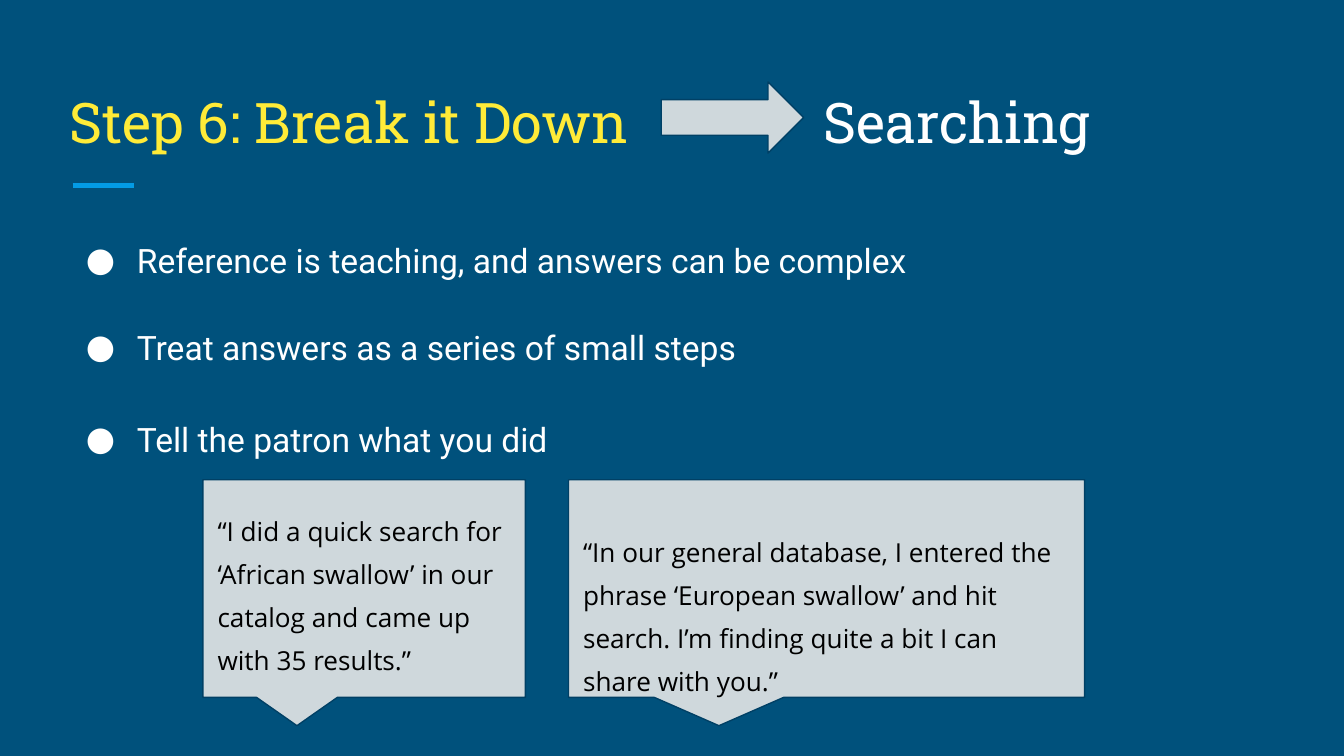
from dataclasses import dataclass

from lxml import etree
from pptx import Presentation
from pptx.dml.color import RGBColor
from pptx.enum.shapes import MSO_CONNECTOR, MSO_SHAPE
from pptx.enum.text import MSO_ANCHOR
from pptx.oxml.ns import qn
from pptx.util import Inches, Pt

STRAIGHT = MSO_CONNECTOR.STRAIGHT
RIGHT_ARROW = MSO_SHAPE.RIGHT_ARROW
TOP, MIDDLE, BOTTOM = MSO_ANCHOR.TOP, MSO_ANCHOR.MIDDLE, MSO_ANCHOR.BOTTOM


@dataclass(frozen=True)
class Theme:
    background: str = "00517C"
    accent: str = "039BE5"
    highlight: str = "FFEB38"
    light: str = "FFFFFF"
    dark: str = "000000"
    panel: str = "CFD8DC"
    outline: str = "004065"
    title_font: str = "Roboto Slab"
    body_font: str = "Roboto"
    quote_font: str = "Open Sans"
    title_size: int = 30
    body_size: int = 18
    quote_size: int = 14


THEME = Theme()

# Text and the space before it in points
POINTS = [
    ("Reference is teaching, and answers can be complex", 0),
    ("Treat answers as a series of small steps", 22),
    ("Tell the patron what you did", 24.5),
]

# Left edge, width, top of the text, text
QUOTES = [
    (1.51, 2.4, 3.68,
     "“I did a quick search for ‘African swallow’ in our catalog "
     "and came up with 35 results.”"),
    (4.23, 3.84, 3.84,
     "“In our general database, I entered the phrase ‘European swallow’ "
     "and hit search. I’m finding quite a bit I can share with you.”"),
]
CALLOUT_TOP, CALLOUT_BOTTOM, CALLOUT_TIP = 3.57, 5.19, 5.4


def rgb(value):
    return RGBColor.from_string(value)


def add_bullet(paragraph, font, color):
    properties = paragraph._p.get_or_add_pPr()
    properties.set("marL", str(Inches(0.5)))
    properties.set("indent", str(Inches(-0.38)))
    bullet_color = etree.SubElement(properties, qn("a:buClr"))
    etree.SubElement(bullet_color, qn("a:srgbClr"), val=color)
    etree.SubElement(properties, qn("a:buFont"), typeface=font)
    etree.SubElement(properties, qn("a:buChar"), char="●")


def add_tab_stop(paragraph, position):
    stops = etree.SubElement(paragraph._p.get_or_add_pPr(), qn("a:tabLst"))
    etree.SubElement(stops, qn("a:tab"), pos=str(Inches(position)), algn="l")


def add_run(paragraph, text, font, size, color):
    run = paragraph.add_run()
    run.text = text
    run.font.name = font
    run.font.size = Pt(size)
    run.font.color.rgb = rgb(color)


def add_text(slide, paragraphs, left, top, width, height, *, font, size, color,
             anchor=TOP, line_spacing=1.0, bulleted=False):
    """Add a text box from (text, space before) pairs and return its frame."""
    box = slide.shapes.add_textbox(
        Inches(left), Inches(top), Inches(width), Inches(height))
    frame = box.text_frame
    frame.word_wrap = True
    frame.vertical_anchor = anchor
    frame.margin_left = frame.margin_right = Inches(0.1)
    frame.margin_top = frame.margin_bottom = Inches(0.1)
    for index, (text, space_before) in enumerate(paragraphs):
        paragraph = frame.add_paragraph() if index else frame.paragraphs[0]
        paragraph.line_spacing = line_spacing
        paragraph.space_before = Pt(space_before)
        if bulleted:
            add_bullet(paragraph, font, color)
        add_run(paragraph, text, font, size, color)
    return frame


def style_panel(shape):
    shape.shadow.inherit = False
    shape.fill.solid()
    shape.fill.fore_color.rgb = rgb(THEME.panel)
    shape.line.color.rgb = rgb(THEME.outline)
    shape.line.width = Pt(0.75)


def add_title(slide):
    """Add the title, with a tab that leaves room for the arrow."""
    frame = add_text(slide, [("Step 6: Break it Down", 0)],
                     0.42, 0.5, 9.15, 0.75, font=THEME.title_font,
                     size=THEME.title_size, color=THEME.highlight, anchor=BOTTOM)
    heading = frame.paragraphs[0]
    add_tab_stop(heading, 5.61)
    add_run(heading, "\tSearching", THEME.title_font, THEME.title_size, THEME.light)
    style_panel(slide.shapes.add_shape(
        RIGHT_ARROW, Inches(4.92), Inches(0.61), Inches(1.06), Inches(0.53)))


def add_title_rule(slide):
    rule = slide.shapes.add_connector(
        STRAIGHT, Inches(0.54), Inches(1.38), Inches(1), Inches(1.38))
    rule.line.color.rgb = rgb(THEME.accent)
    rule.line.width = Pt(3)
    etree.SubElement(rule._element.spPr, qn("a:effectLst"))


def add_callout(slide, left, width):
    """Draw a speech panel whose tail sits at fixed fractions of its width."""
    right = left + width
    tail_left, tip, tail_right = (left + width * part / 24 for part in (4, 7, 10))
    outline = [
        (right, CALLOUT_TOP), (right, CALLOUT_BOTTOM),
        (tail_right, CALLOUT_BOTTOM), (tip, CALLOUT_TIP),
        (tail_left, CALLOUT_BOTTOM), (left, CALLOUT_BOTTOM),
    ]
    builder = slide.shapes.build_freeform(Inches(left), Inches(CALLOUT_TOP))
    builder.add_line_segments([(Inches(x), Inches(y)) for x, y in outline])
    style_panel(builder.convert_to_shape())


def add_quote(slide, left, width, text_top, text):
    add_callout(slide, left, width)
    add_text(slide, [(text, 6)], left + 0.01, text_top, width - 0.01, 1.41,
             font=THEME.quote_font, size=THEME.quote_size, color=THEME.dark,
             anchor=MIDDLE, line_spacing=1.37)


def main():
    presentation = Presentation()
    presentation.slide_width = Inches(10)
    presentation.slide_height = Inches(10 * 9 / 16)
    slide = presentation.slides.add_slide(presentation.slide_layouts[6])
    slide.background.fill.solid()
    slide.background.fill.fore_color.rgb = rgb(THEME.background)

    add_title_rule(slide)
    add_title(slide)
    add_text(slide, POINTS, 0.42, 1.64, 9.15, 3.37,
             font=THEME.body_font, size=THEME.body_size, color=THEME.light,
             line_spacing=1.15, bulleted=True)
    for quote in QUOTES:
        add_quote(slide, *quote)
    presentation.save("out.pptx")


if __name__ == "__main__":
    main()
